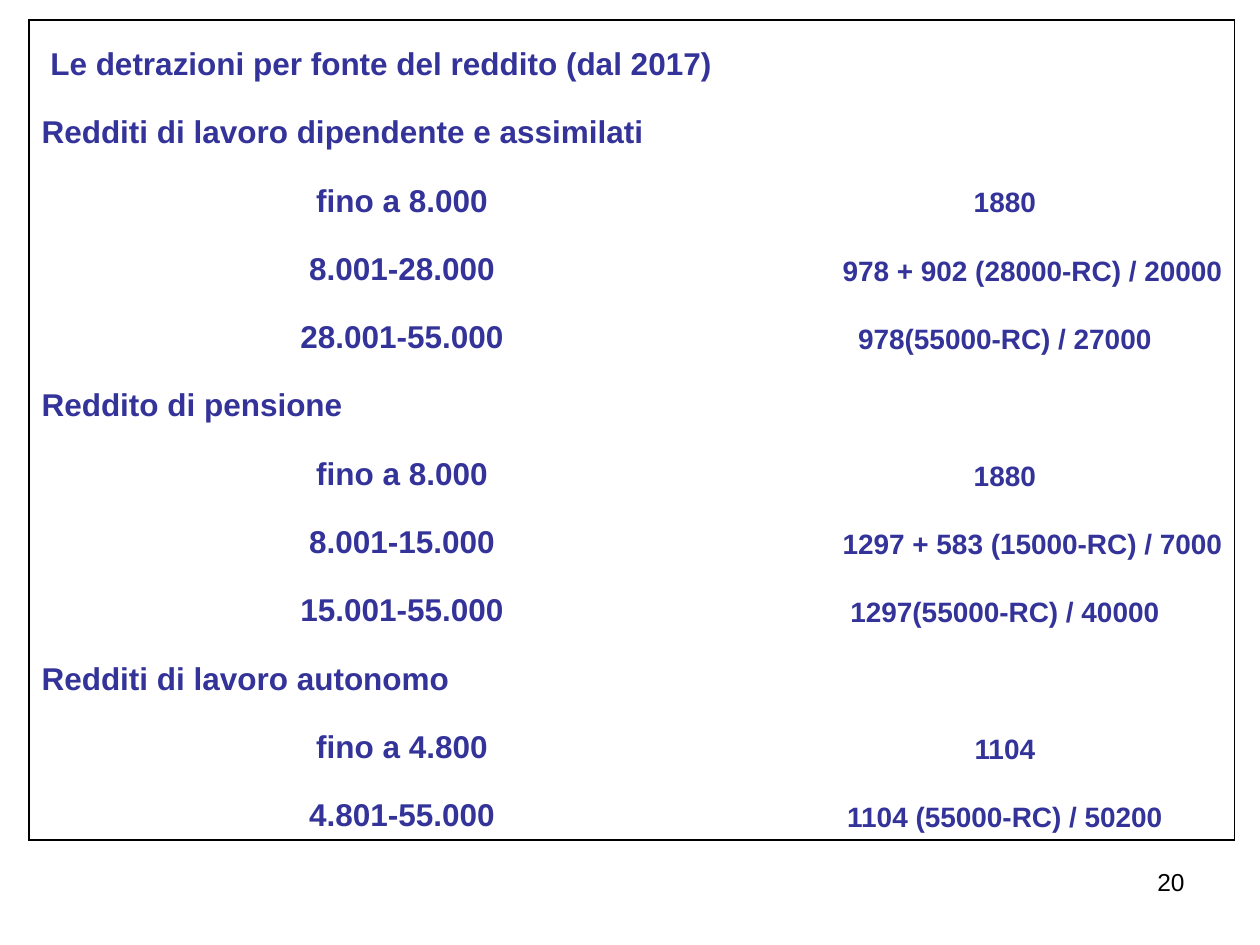
import pptx
import pptx.util
import pptx.dml.color
import pptx.enum.text
import pptx.oxml
import pptx.oxml.ns

Inches = pptx.util.Inches
Pt = pptx.util.Pt
ALIGN = pptx.enum.text.PP_ALIGN

TITLE = "Le detrazioni per fonte del reddito (dal 2017)"
SECTIONS = [
    ("Redditi di lavoro dipendente e assimilati", [
        ("fino a 8.000", "1880", ALIGN.CENTER),
        ("8.001-28.000", "978 + 902 (28000-RC) / 20000", ALIGN.RIGHT),
        ("28.001-55.000", "978(55000-RC) / 27000", ALIGN.CENTER),
    ]),
    ("Reddito di pensione", [
        ("fino a 8.000", "1880", ALIGN.CENTER),
        ("8.001-15.000", "1297 + 583 (15000-RC) / 7000", ALIGN.RIGHT),
        ("15.001-55.000", "1297(55000-RC) / 40000", ALIGN.CENTER),
    ]),
    ("Redditi di lavoro autonomo", [
        ("fino a 4.800", "1104", ALIGN.CENTER),
        ("4.801-55.000", "1104 (55000-RC) / 50200", ALIGN.CENTER),
    ]),
]
PAGE = "20"
INK, BLACK = "333399", "000000"
LEFT, TOP, HEIGHT = 0.23, 0.16, 6.51
COLS = [5.92, 3.65]


def color(hex_code):
    return pptx.dml.color.RGBColor.from_string(hex_code)


def write(tf, text, size, ink, align, bold=False):
    p = tf.paragraphs[0]
    p.alignment = align
    r = p.add_run()
    r.text = text
    r.font.name = "Arial"
    r.font.size = Pt(size)
    r.font.bold = bold
    r.font.color.rgb = color(ink)


def set_borders(cell, sides):
    tcPr = cell._tc.get_or_add_tcPr()
    for i, side in enumerate("LRTB"):
        paint = (f'<a:solidFill><a:srgbClr val="{BLACK}"/></a:solidFill>'
                 if side in sides else "<a:noFill/>")
        ln = pptx.oxml.parse_xml(
            f'<a:ln{side} {pptx.oxml.ns.nsdecls("a")} w="{Pt(1)}">{paint}</a:ln{side}>')
        tcPr.insert(i, ln)


def table_rows():
    rows = [[(TITLE, 18, ALIGN.LEFT), None]]
    for heading, brackets in SECTIONS:
        rows.append([(heading, 18, ALIGN.LEFT), None])
        for bracket, amount, align in brackets:
            rows.append([(bracket, 18, ALIGN.CENTER), (amount, 16, align)])
    return rows


def add_deductions(s):
    rows = table_rows()
    table = s.shapes.add_table(len(rows), len(COLS), Inches(LEFT), Inches(TOP),
                               Inches(sum(COLS)), Inches(HEIGHT)).table
    table.first_row = table.horz_banding = False
    for col, width in zip(table.columns, COLS):
        col.width = Inches(width)
    for i, row in enumerate(rows):
        table.rows[i].height = Inches(HEIGHT / len(rows))
        for j, content in enumerate(row):
            cell = table.cell(i, j)
            cell.vertical_anchor = pptx.enum.text.MSO_ANCHOR.BOTTOM
            cell.fill.background()
            sides = "LR"[j]
            if i == 0:
                sides += "T"
            if i == len(rows) - 1:
                sides += "B"
            set_borders(cell, sides)
            if content:
                text, size, align = content
                write(cell.text_frame, text, size, INK, align, bold=True)
    table.cell(0, 0).margin_left = Inches(0.17)


def add_page_number(s):
    box = s.shapes.add_textbox(Inches(7.17), Inches(6.83), Inches(2.33), Inches(0.52))
    box.text_frame.word_wrap = True
    write(box.text_frame, PAGE, 14, BLACK, ALIGN.RIGHT)


def main():
    prs = pptx.Presentation()
    prs.slide_width, prs.slide_height = Inches(10), Inches(7.5)
    s = prs.slides.add_slide(prs.slide_layouts[6])
    add_deductions(s)
    add_page_number(s)
    prs.save("out.pptx")


if __name__ == "__main__":
    main()
